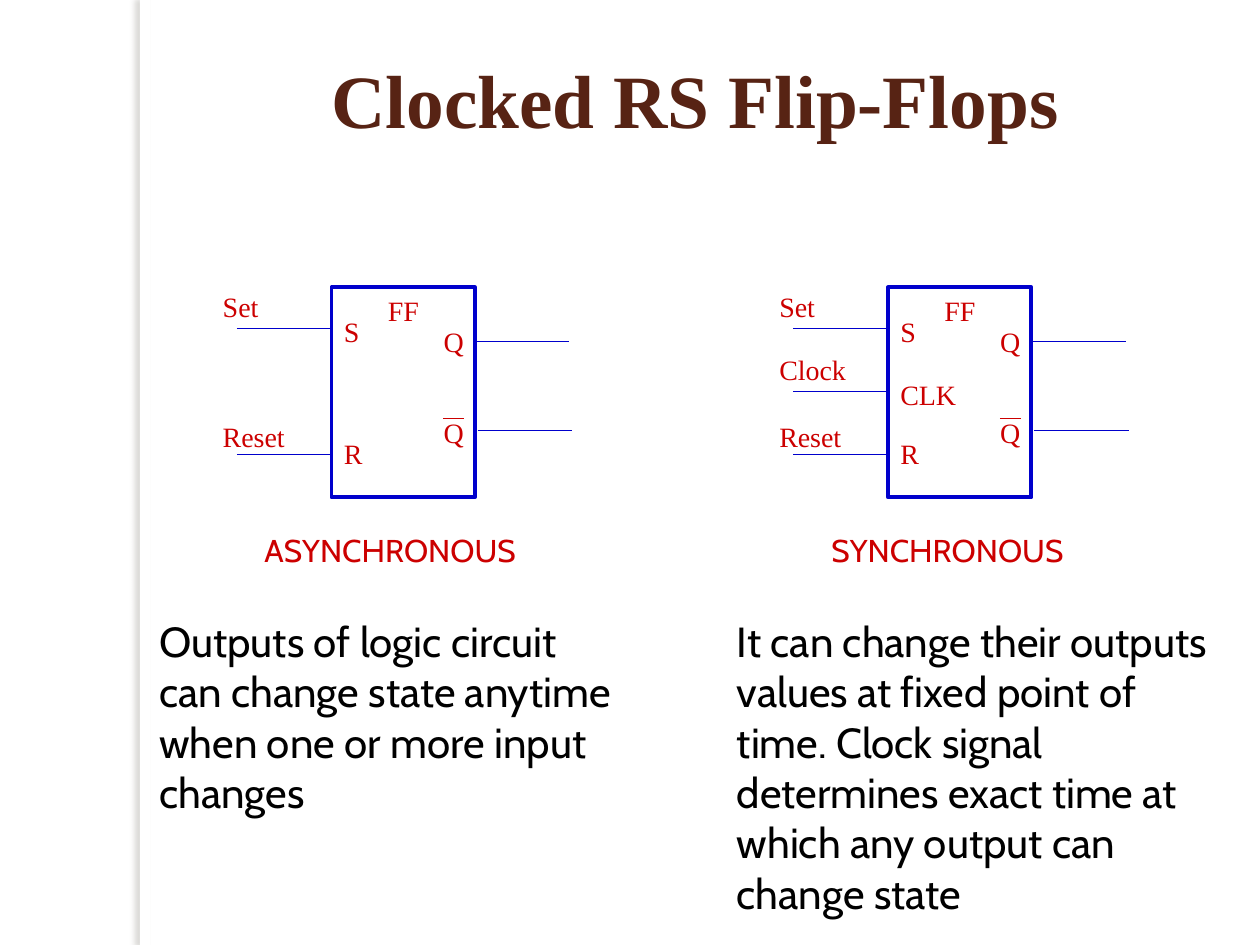
from lxml.etree import SubElement
from pptx import Presentation
from pptx.dml.color import RGBColor
from pptx.enum.shapes import MSO_CONNECTOR as Conn, MSO_SHAPE as Shape
from pptx.enum.text import MSO_ANCHOR as Anchor, MSO_AUTO_SIZE as Fit, PP_ALIGN as Align
from pptx.oxml import parse_xml
from pptx.oxml.ns import qn
from pptx.util import Pt

RED = RGBColor(0xCC, 0x00, 0x00)
BLUE = RGBColor(0x00, 0x00, 0xCC)
BROWN = RGBColor(0x57, 0x23, 0x14)
BLACK = RGBColor(0x00, 0x00, 0x00)
WHITE = RGBColor(0xFF, 0xFF, 0xFF)
SERIF, SANS = "Times New Roman", "Cabin"


def write(frame, text, color, **form):
    """Put text in a frame and set its font from the format values."""
    frame.word_wrap = True
    par = frame.paragraphs[0]
    par.text = text
    font = par.runs[0].font
    font.color.rgb = color
    for key, val in form.items():
        setattr(font, key, val)
    return par


def wire(group, left, right, y, color):
    line = group.shapes.add_connector(Conn.STRAIGHT, Pt(left), Pt(y), Pt(right), Pt(y))
    line.line.color.rgb = color
    line.line.width = Pt(0.75)
    SubElement(line._element.spPr, qn("a:effectLst"))


prs = Presentation()
prs.slide_width, prs.slide_height = Pt(720), Pt(540)
slide = prs.slides.add_slide(prs.slide_layouts[5])

# Title
title = slide.shapes.title
title.left, title.top, title.width, title.height = Pt(102), Pt(21.6), Pt(590.4), Pt(90)
frame = title.text_frame
frame.auto_size = Fit.NONE
frame.vertical_anchor = Anchor.TOP
frame.margin_top = Pt(8.6)
par = write(frame, "Clocked RS Flip-Flops", BROWN, name=SERIF, size=Pt(43), bold=True)
par.alignment = Align.CENTER

# Side strip with a soft shadow to its left
strip = slide.shapes.add_shape(Shape.RECTANGLE, Pt(80), Pt(0), Pt(5.76), Pt(540))
strip.fill.solid()
strip.fill.fore_color.rgb = WHITE
strip.line.fill.background()
strip._element.spPr.append(parse_xml(
    '<a:effectLst xmlns:a="http://schemas.openxmlformats.org/drawingml/2006/main">'
    '<a:outerShdw blurRad="38100" dist="38100" dir="10800000" rotWithShape="0">'
    '<a:srgbClr val="736F63"><a:alpha val="25000"/></a:srgbClr>'
    '</a:outerShdw></a:effectLst>'))

# Pin labels: text, x from the box edge, y, width
PINS = [("Set", -69.2, 162, 38), ("Reset", -69.2, 236.2, 63.4),
        ("S", 0, 176.4, 25), ("R", 0, 246.2, 25),
        ("Q", 57, 182.2, 25), ("Q", 57, 234, 25), ("FF", 25.2, 164.2, 38)]
CLOCK = [("Clock", -69.2, 198, 63.4), ("CLK", 0, 212.4, 57)]
# Wires: start and end from the box edge, y, colour
WIRES = [(82, 136, 195.1, BLUE), (83.5, 137.5, 246.2, BLUE),
         (-54, -0.5, 187.9, BLUE), (-54, -0.5, 259.9, BLUE),
         (64, 76, 239, RED)]
TICK = [(-54, -0.5, 223.9, BLUE)]

# Box edge, labels, wires, caption and note, each text with its x and width
SIDES = [
    (189.4, PINS, WIRES, ("ASYNCHRONOUS", 144, 174),
     ("Outputs of logic circuit can change state anytime when one or more "
      "input changes", 84, 282, 94.3)),
    (507.4, PINS + CLOCK, WIRES + TICK, ("SYNCHRONOUS", 468, 157),
     ("It can change their outputs values at fixed point of time. Clock signal "
      "determines exact time at which any output can change state", 414, 288, 152.6)),
]

for edge, pins, wires, (name, cap, wide), (note, left, span, high) in SIDES:
    group = slide.shapes.add_group_shape()
    box = group.shapes.add_shape(Shape.RECTANGLE, Pt(edge), Pt(164.2), Pt(82), Pt(120))
    box.shadow.inherit = False
    box.fill.background()
    box.line.color.rgb = BLUE
    box.line.width = Pt(2.25)

    texts = [(text, edge + x, y, w, 26.6, SERIF, 16, RED) for text, x, y, w in pins]
    texts += [(name, cap, 300.2, wide, 28.8, SANS, 18, RED),
              (note, left, 348, span, high, SANS, 24, BLACK)]
    for text, x, y, w, h, face, size, color in texts:
        label = group.shapes.add_textbox(Pt(x), Pt(y), Pt(w), Pt(h))
        label.text_frame.auto_size = Fit.SHAPE_TO_FIT_TEXT
        write(label.text_frame, text, color, name=face, size=Pt(size))

    for start, end, y, color in wires:
        wire(group, edge + start, edge + end, y, color)

prs.save("out.pptx")
